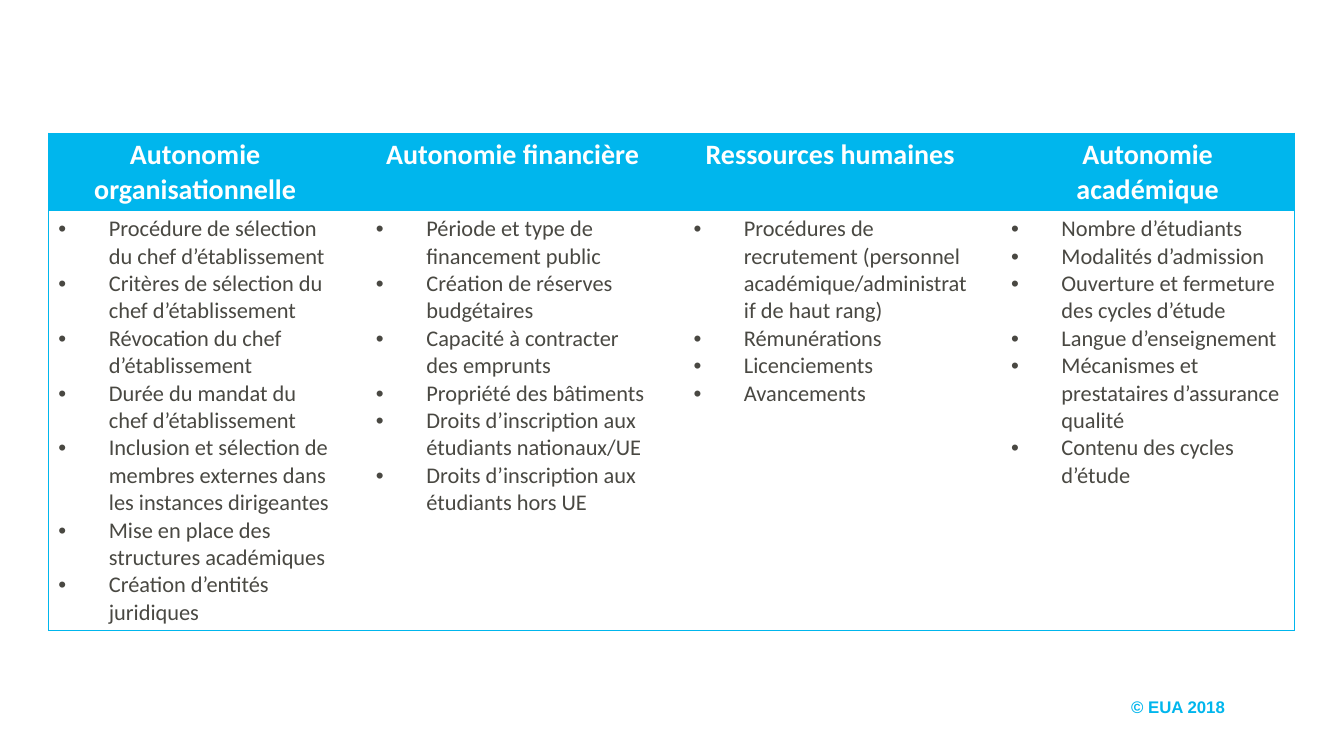
import pptx
import pptx.util
import pptx.dml.color
import pptx.enum.text
import pptx.oxml.ns
import lxml.etree

Inches = pptx.util.Inches
Pt = pptx.util.Pt
qn = pptx.oxml.ns.qn

TOPICS = [
    ("Autonomie organisationnelle", [
        "Procédure de sélection du chef d’établissement",
        "Critères de sélection du chef d’établissement",
        "Révocation du chef d’établissement",
        "Durée du mandat du chef d’établissement",
        "Inclusion et sélection de membres externes dans les instances dirigeantes",
        "Mise en place des structures académiques",
        "Création d’entités juridiques",
    ]),
    ("Autonomie financière", [
        "Période et type de financement public",
        "Création de réserves budgétaires",
        "Capacité à contracter des emprunts",
        "Propriété des bâtiments",
        "Droits d’inscription aux étudiants nationaux/UE",
        "Droits d’inscription aux étudiants hors UE",
    ]),
    ("Ressources humaines", [
        "Procédures de recrutement (personnel académique/administratif de haut rang)",
        "Rémunérations",
        "Licenciements",
        "Avancements",
    ]),
    ("Autonomie académique", [
        "Nombre d’étudiants",
        "Modalités d’admission",
        "Ouverture et fermeture des cycles d’étude",
        "Langue d’enseignement",
        "Mécanismes et prestataires d’assurance qualité",
        "Contenu des cycles d’étude",
    ]),
]


def color(code):
    return pptx.dml.color.RGBColor.from_string(code)


class Page:
    blue = "00B6ED"
    white = "FFFFFF"
    gray = "494842"
    plain = "{2D5ABB26-0587-4C30-8999-92F81FD0307C}"

    def __init__(self, deck):
        self.slide = deck.slides.add_slide(deck.slide_layouts[6])

    def words(self, para, text, size, code, bold=False, face="Calibri"):
        run = para.add_run()
        run.text = text
        font = run.font
        font.name = face
        font.size = Pt(size)
        font.bold = bold
        font.color.rgb = color(code)

    def label(self, text, left, top, width, height):
        box = self.slide.shapes.add_textbox(
            Inches(left), Inches(top), Inches(width), Inches(height))
        frame = box.text_frame
        frame.word_wrap = False
        frame.vertical_anchor = pptx.enum.text.MSO_ANCHOR.MIDDLE
        self.words(frame.paragraphs[0], text, 12, self.blue, True, "Arial")

    def edge(self, cell, sides):
        props = cell._tc.get_or_add_tcPr()
        for spot, side in enumerate(sides):
            line = lxml.etree.Element(qn("a:ln" + side), w=str(Pt(0.5)))
            fill = lxml.etree.SubElement(line, qn("a:solidFill"))
            lxml.etree.SubElement(fill, qn("a:srgbClr"), val=self.blue)
            props.insert(spot, line)

    def bullet(self, para, text):
        props = para._p.get_or_add_pPr()
        props.set("marL", str(Inches(0.5)))
        props.set("indent", str(Inches(-0.5)))
        lxml.etree.SubElement(props, qn("a:buFont"), typeface="Arial")
        lxml.etree.SubElement(props, qn("a:buChar"), char="•")
        self.words(para, text, 16, self.gray)

    def head(self, cell, title):
        para = cell.text_frame.paragraphs[0]
        para.alignment = pptx.enum.text.PP_ALIGN.CENTER
        self.words(para, title, 20, self.white, True)

    def items(self, cell, texts):
        frame = cell.text_frame
        for spot, text in enumerate(texts):
            para = frame.add_paragraph() if spot else frame.paragraphs[0]
            self.bullet(para, text)

    def table(self, topics, left, top, wide, gap, rows):
        count = 2 * len(topics) - 1
        width = len(topics) * wide + (len(topics) - 1) * gap
        grid = self.slide.shapes.add_table(
            len(rows), count, Inches(left), Inches(top),
            Inches(width), Inches(sum(rows))).table
        grid.horz_banding = False
        grid.first_row = False
        grid._tbl.tblPr.find(qn("a:tableStyleId")).text = self.plain
        for row, high in zip(grid.rows, rows):
            row.height = Inches(high)
        for col in range(count):
            grid.columns[col].width = Inches(gap if col % 2 else wide)
            side = {0: "L", count - 1: "R"}.get(col, "")
            upper, body = grid.cell(0, col), grid.cell(1, col)
            upper.fill.solid()
            upper.fill.fore_color.rgb = color(self.blue)
            body.fill.background()
            self.edge(upper, side + "T")
            self.edge(body, side + "TB")
        for spot, (title, texts) in enumerate(topics):
            self.head(grid.cell(0, 2 * spot), title)
            self.items(grid.cell(1, 2 * spot), texts)


def main():
    deck = pptx.Presentation()
    deck.slide_width = Inches(13.33)
    deck.slide_height = Inches(7.5)
    page = Page(deck)
    page.label("© EUA 2018", 11.12, 6.81, 1.13, 0.4)
    page.table(TOPICS, 0.48, 1.32, 2.91, 0.23, [0.7, 4.17])
    deck.save("out.pptx")


if __name__ == "__main__":
    main()
